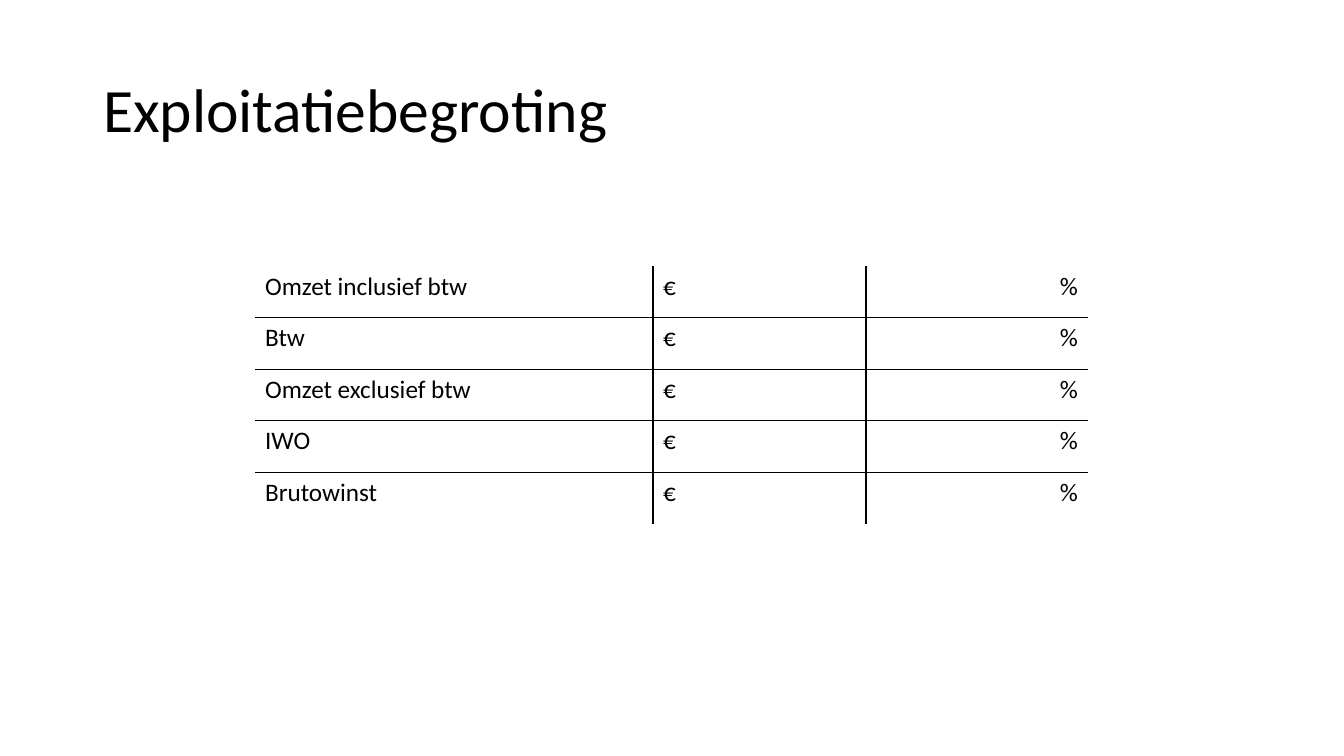
from lxml import etree
from pptx import Presentation
from pptx import util as u
from pptx.dml.color import RGBColor
from pptx.enum import text
from pptx.oxml import ns

BLACK = RGBColor(0x00, 0x00, 0x00)
WHITE = RGBColor(0xFF, 0xFF, 0xFF)
SCALE = u.Inches(1) / 100.8


def px(length):
    return u.Emu(round(length * SCALE))


class BudgetSlide:
    font_name = "Calibri"
    border_width = u.Pt(1)

    def __init__(self, presentation):
        self.slide = presentation.slides.add_slide(presentation.slide_layouts[5])
        fill = self.slide.background.fill
        fill.solid()
        fill.fore_color.rgb = WHITE

    def add_text(self, paragraph, wording, size, alignment):
        paragraph.alignment = alignment
        run = paragraph.add_run()
        run.text = wording
        run.font.name = self.font_name
        run.font.size = u.Pt(size)
        run.font.color.rgb = BLACK

    def title(self, wording, left, top, width, height):
        shape = self.slide.shapes.title
        shape.left, shape.top = px(left), px(top)
        shape.width, shape.height = px(width), px(height)
        frame = shape.text_frame
        frame.word_wrap = True
        frame.vertical_anchor = text.MSO_ANCHOR.MIDDLE
        paragraph = frame.paragraphs[0]
        paragraph.line_spacing = 0.9
        self.add_text(paragraph, wording, 44, text.PP_ALIGN.LEFT)

    def borders(self, cell, visible):
        properties = cell._tc.get_or_add_tcPr()
        for index, side in enumerate("LRTB"):
            line = etree.Element(ns.qn(f"a:ln{side}"), w=str(self.border_width))
            if side in visible:
                solid = etree.SubElement(line, ns.qn("a:solidFill"))
                etree.SubElement(solid, ns.qn("a:srgbClr"), val=str(BLACK))
            else:
                etree.SubElement(line, ns.qn("a:noFill"))
            properties.insert(index, line)

    def table(self, rows, alignments, left, top, widths, height):
        shape = self.slide.shapes.add_table(
            len(rows), len(widths), px(left), px(top), px(sum(widths)), px(height))
        table = shape.table
        table.first_row = table.horz_banding = False
        for column, width in zip(table.columns, widths):
            column.width = px(width)
        last_row, last_column = len(rows) - 1, len(widths) - 1
        for i, row in enumerate(rows):
            for j, wording in enumerate(row):
                cell = table.cell(i, j)
                cell.fill.background()
                self.add_text(cell.text_frame.paragraphs[0], wording, 18, alignments[j])
                # Only the inner grid lines are drawn
                inner = {"L": j > 0, "R": j < last_column,
                         "T": i > 0, "B": i < last_row}
                self.borders(cell, [side for side in inner if inner[side]])


def main():
    presentation = Presentation()
    presentation.slide_width, presentation.slide_height = px(1344), px(756)
    budget = BudgetSlide(presentation)

    # Title
    budget.title("Exploitatiebegroting", 93, 40, 1159, 146)

    # Budget table
    items = ["Omzet inclusief btw", "Btw", "Omzet exclusief btw", "IWO", "Brutowinst"]
    left, right = text.PP_ALIGN.LEFT, text.PP_ALIGN.RIGHT
    budget.table([(item, "€", "%") for item in items], (left, left, right),
                 255, 266, (398, 213, 222), 258)

    presentation.save("out.pptx")


if __name__ == "__main__":
    main()
